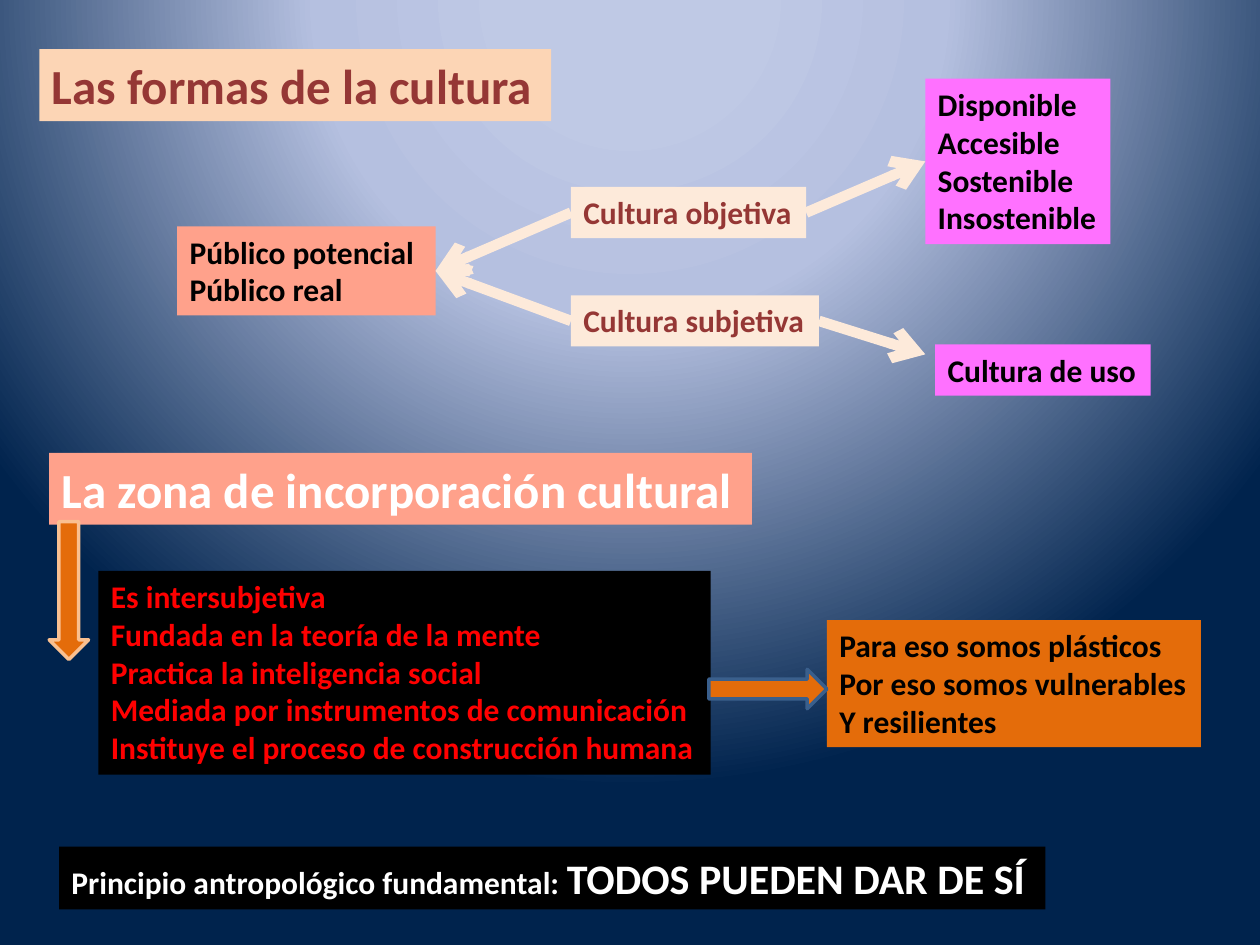
import pptx
import pptx.dml.color
import pptx.enum.shapes
import pptx.enum.text
import pptx.oxml
import pptx.oxml.ns
import pptx.util

COLUMNS, ROWS = 128, 96
TOP, LEFT, BOTTOM, RIGHT = range(4)
SHAPES = pptx.enum.shapes.MSO_SHAPE

CREAM, SALMON, PINK = "FDEADA", "FFA18B", "FF71FF"
ORANGE, MAROON, BLACK, WHITE = "E46C0A", "953735", "000000", "FFFFFF"

GRADIENT = """<a:gradFill %s rotWithShape="1"><a:gsLst>
<a:gs pos="14000"><a:srgbClr val="BFC9E5"><a:alpha val="84000"/></a:srgbClr></a:gs>
<a:gs pos="40000"><a:srgbClr val="B5C0E0"/></a:gs>
<a:gs pos="100000"><a:srgbClr val="00234D"/></a:gs></a:gsLst>
<a:path path="circle"><a:fillToRect l="50000" t="-80000" r="50000" b="180000"/></a:path>
</a:gradFill>""" % pptx.oxml.ns.nsdecls("a")


def color(value):
    return pptx.dml.color.RGBColor.from_string(value)


def add_text(paragraph, text, size=18, ink=BLACK, font="Calibri", bold=True):
    run = paragraph.add_run()
    run.text = text
    run.font.size = pptx.util.Pt(size)
    run.font.name = font
    run.font.bold = bold
    run.font.color.rgb = color(ink)


class Diagram:
    """Draws on one slide; lengths are columns and rows of a 128 by 96 grid."""

    def __init__(self, presentation):
        self.column = presentation.slide_width / COLUMNS
        self.row = presentation.slide_height / ROWS
        self.slide = presentation.slides.add_slide(presentation.slide_layouts[6])

    def place(self, column, row):
        return round(column * self.column), round(row * self.row)

    def background(self, gradient):
        self.slide.background.fill.solid()
        solid = self.slide._element.find(".//" + pptx.oxml.ns.qn("a:solidFill"))
        solid.getparent().replace(solid, pptx.oxml.parse_xml(gradient))

    def shape(self, kind, column, row, width, height, fill, line=None):
        shape = self.slide.shapes.add_shape(
            kind, *self.place(column, row), *self.place(width, height))
        shape.shadow.inherit = False
        shape.fill.solid()
        shape.fill.fore_color.rgb = color(fill)
        if line:
            shape.line.color.rgb = color(line)
            shape.line.width = pptx.util.Pt(2)
        else:
            shape.line.fill.background()
        return shape

    def box(self, column, row, width, height, fill, lines, **text_format):
        """Each line is a string, or a list of (text, size) pairs."""
        shape = self.shape(SHAPES.RECTANGLE, column, row, width, height, fill)
        frame = shape.text_frame
        frame.word_wrap = True
        frame.margin_right = 0
        frame.vertical_anchor = pptx.enum.text.MSO_ANCHOR.TOP
        for index, line in enumerate(lines):
            paragraph = frame.add_paragraph() if index else frame.paragraphs[0]
            paragraph.alignment = pptx.enum.text.PP_ALIGN.LEFT
            if isinstance(line, str):
                add_text(paragraph, line, **text_format)
            else:
                for text, size in line:
                    add_text(paragraph, text, size=size, **text_format)
        return shape

    def arrow(self, start, start_side, end, end_side=None):
        """The end is a shape with its side, or a (column, row) point."""
        target = self.place(*end) if end_side is None else (0, 0)
        connector = self.slide.shapes.add_connector(
            pptx.enum.shapes.MSO_CONNECTOR.STRAIGHT, 0, 0, *target)
        connector.begin_connect(start, start_side)
        if end_side is not None:
            connector.end_connect(end, end_side)
        connector.line.color.rgb = color(CREAM)
        connector.line.width = pptx.util.Pt(6)
        line = connector.line._get_or_add_ln()
        line.append(pptx.oxml.parse_xml(
            '<a:tailEnd %s type="arrow"/>' % pptx.oxml.ns.nsdecls("a")))
        connector._element.spPr.append(pptx.oxml.parse_xml(
            "<a:effectLst %s/>" % pptx.oxml.ns.nsdecls("a")))


def main():
    presentation = pptx.Presentation()
    presentation.slide_width = pptx.util.Inches(10)
    presentation.slide_height = pptx.util.Inches(7.5)
    diagram = Diagram(presentation)
    diagram.background(GRADIENT)

    diagram.box(4, 5, 52, 7.3, "FCD5B5", ["Las formas de la cultura"], size=28, ink=MAROON)
    objective = diagram.box(58, 19, 23.9, 5.2, CREAM, ["Cultura objetiva"], ink=MAROON)
    subjective = diagram.box(58, 30, 25.2, 5.2, CREAM, ["Cultura subjetiva"], ink=MAROON)
    availability = diagram.box(94, 8, 18.8, 16.8, PINK,
                               ["Disponible", "Accesible", "Sostenible", "Insostenible"])
    diagram.arrow(objective, RIGHT, availability, LEFT)
    diagram.box(95, 35, 21.9, 5.2, PINK, ["Cultura de uso"])
    diagram.arrow(subjective, RIGHT, (94, 36))
    audience = diagram.box(18, 23, 26.25, 9.05, SALMON, ["Público potencial", "Público real"])
    for culture in (objective, subjective):
        diagram.arrow(culture, LEFT, audience, RIGHT)

    diagram.box(5, 46, 71.4, 7.3, SALMON, ["La zona de incorporación cultural"],
                size=28, ink=WHITE)
    diagram.box(10, 58, 62.2, 20.7, BLACK, [
        "Es intersubjetiva",
        "Fundada en la teoría de la mente",
        "Practica la inteligencia social",
        "Mediada por instrumentos de comunicación",
        "Instituye el proceso de construcción humana",
    ], ink="FF0000")
    diagram.shape(SHAPES.DOWN_ARROW, 5, 53, 4, 14, ORANGE, "FAC090")
    diagram.box(84, 63, 38, 12.9, ORANGE, [
        "Para eso somos plásticos", "Por eso somos vulnerables", "Y resilientes"])
    diagram.shape(SHAPES.RIGHT_ARROW, 72, 68, 12, 4, ORANGE, "3A5F8C")
    diagram.box(6, 86, 100.2, 6.4, BLACK, [
        [("Principio antropológico fundamental: ", 18), ("TODOS PUEDEN DAR DE SÍ", 24)],
    ], ink=WHITE)

    presentation.save("out.pptx")


if __name__ == "__main__":
    main()
